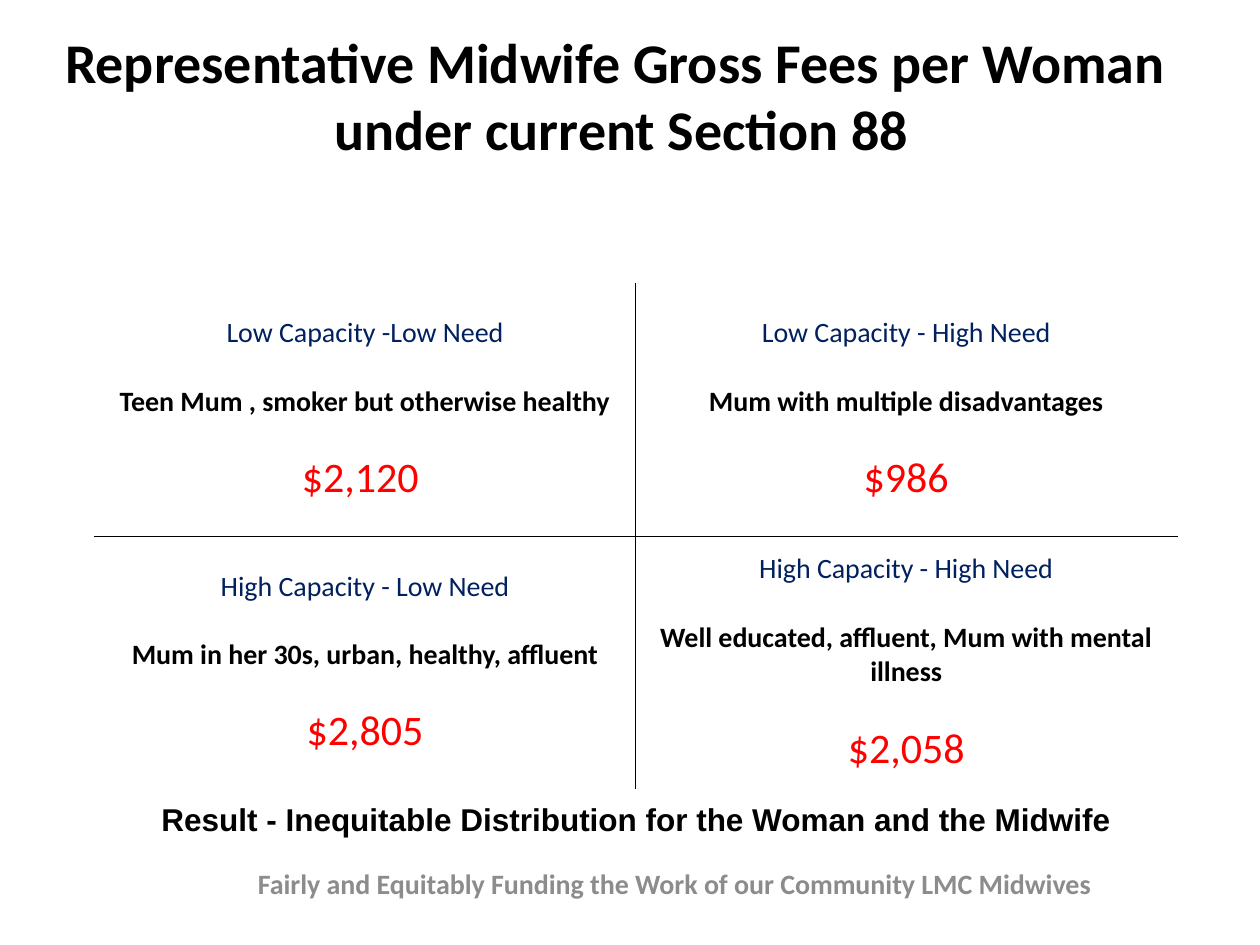
from lxml.etree import SubElement
from pptx import Presentation
from pptx.dml.color import RGBColor
from pptx.enum.text import MSO_ANCHOR, PP_ALIGN
from pptx.oxml.ns import qn
from pptx.util import Inches, Pt

BLACK = RGBColor(0x00, 0x00, 0x00)
NAVY = RGBColor(0x00, 0x20, 0x60)
RED = RGBColor(0xFF, 0x00, 0x00)
GREY = RGBColor(0x8C, 0x8C, 0x8C)

TITLE = {"name": "Calibri", "size": Pt(32), "bold": True, "color": BLACK}
RESULT = {"name": "Arial", "size": Pt(18), "bold": True, "color": BLACK}
FOOTER = {"name": "Calibri", "size": Pt(16), "bold": True, "color": GREY}
QUADRANT = HEADING, MOTHER, FEE = (
    {"name": "Calibri", "size": Pt(16), "bold": False, "color": NAVY},
    {"name": "Calibri", "size": Pt(16), "bold": True, "color": BLACK},
    {"name": "Calibri", "size": Pt(24), "bold": False, "color": RED},
)
LINE_GAP = Pt(19.5)

FEES = [
    [
        ("Low Capacity -Low Need", "Teen Mum , smoker but otherwise healthy", "$2,120 "),
        ("Low Capacity - High Need", "Mum with multiple disadvantages", "$986"),
    ],
    [
        ("High Capacity - Low Need", "Mum in her 30s, urban, healthy, affluent", "$2,805"),
        ("High Capacity - High Need", "Well educated, affluent, Mum with mental illness", "$2,058"),
    ],
]


def write(para, text, style):
    """Fill a centred paragraph with text in the given style."""
    para.text = text
    para.alignment = PP_ALIGN.CENTER
    for span in para.runs:
        for name, value in style.items():
            if name == "color":
                span.font.color.rgb = value
            else:
                setattr(span.font, name, value)


def add_title(page, box):
    """Place the two-line heading in the title placeholder."""
    title = page.shapes.title
    title.left, title.top, title.width, title.height = box
    frame = title.text_frame
    layout = {"word_wrap": True, "vertical_anchor": MSO_ANCHOR.MIDDLE, "margin_bottom": Inches(0.59)}
    for name, value in layout.items():
        setattr(frame, name, value)
    write(frame.paragraphs[0], "Representative Midwife Gross Fees per Woman \vunder current Section 88", TITLE)


def add_border(cell, side):
    """Draw a thin black line on one side of a cell."""
    line = SubElement(cell._tc.get_or_add_tcPr(), qn(f"a:{side}"), w=str(Pt(1)))
    fill = SubElement(line, qn("a:solidFill"))
    SubElement(fill, qn("a:srgbClr"), val=str(BLACK))


def add_matrix(page, box):
    """Place the capacity and need matrix with its inner cross."""
    table = page.shapes.add_table(len(FEES), len(FEES[0]), *box).table
    table.first_row = table.horz_banding = False
    for row, quadrants in enumerate(FEES):
        for column, texts in enumerate(quadrants):
            cell = table.cell(row, column)
            cell.vertical_anchor = MSO_ANCHOR.MIDDLE
            add_border(cell, "lnL" if column else "lnR")
            add_border(cell, "lnT" if row else "lnB")
            cell.fill.background()
            frame = cell.text_frame
            for index, (text, style) in enumerate(zip(texts, QUADRANT)):
                para = frame.add_paragraph() if index else frame.paragraphs[0]
                write(para, text, style)
                if index:
                    para.space_before = LINE_GAP


def add_line(page, box, text, style, anchor):
    """Place one centred line of text in a box."""
    frame = page.shapes.add_textbox(*box).text_frame
    frame.word_wrap = True
    frame.vertical_anchor = anchor
    write(frame.paragraphs[0], text, style)


def main():
    """Build the fee comparison slide."""
    deck = Presentation()
    deck.slide_width, deck.slide_height = Inches(10), Inches(7.5)
    page = deck.slides.add_slide(deck.slide_layouts[5])

    def share(left, top, width, height):
        """Turn shares of the slide into a box."""
        return (
            int(deck.slide_width * left),
            int(deck.slide_height * top),
            int(deck.slide_width * width),
            int(deck.slide_height * height),
        )

    add_title(page, share(0.012, 0.084, 0.963, 0.105))
    add_matrix(page, share(0.075, 0.3, 0.859, 0.536))
    add_line(page, share(0.072, 0.84, 0.866, 0.053),
             "Result - Inequitable Distribution for the Woman and the Midwife", RESULT, MSO_ANCHOR.TOP)
    add_line(page, share(0.185, 0.912, 0.701, 0.045),
             "Fairly and Equitably Funding the Work of our Community LMC Midwives", FOOTER, MSO_ANCHOR.MIDDLE)
    deck.save("out.pptx")


if __name__ == "__main__":
    main()
